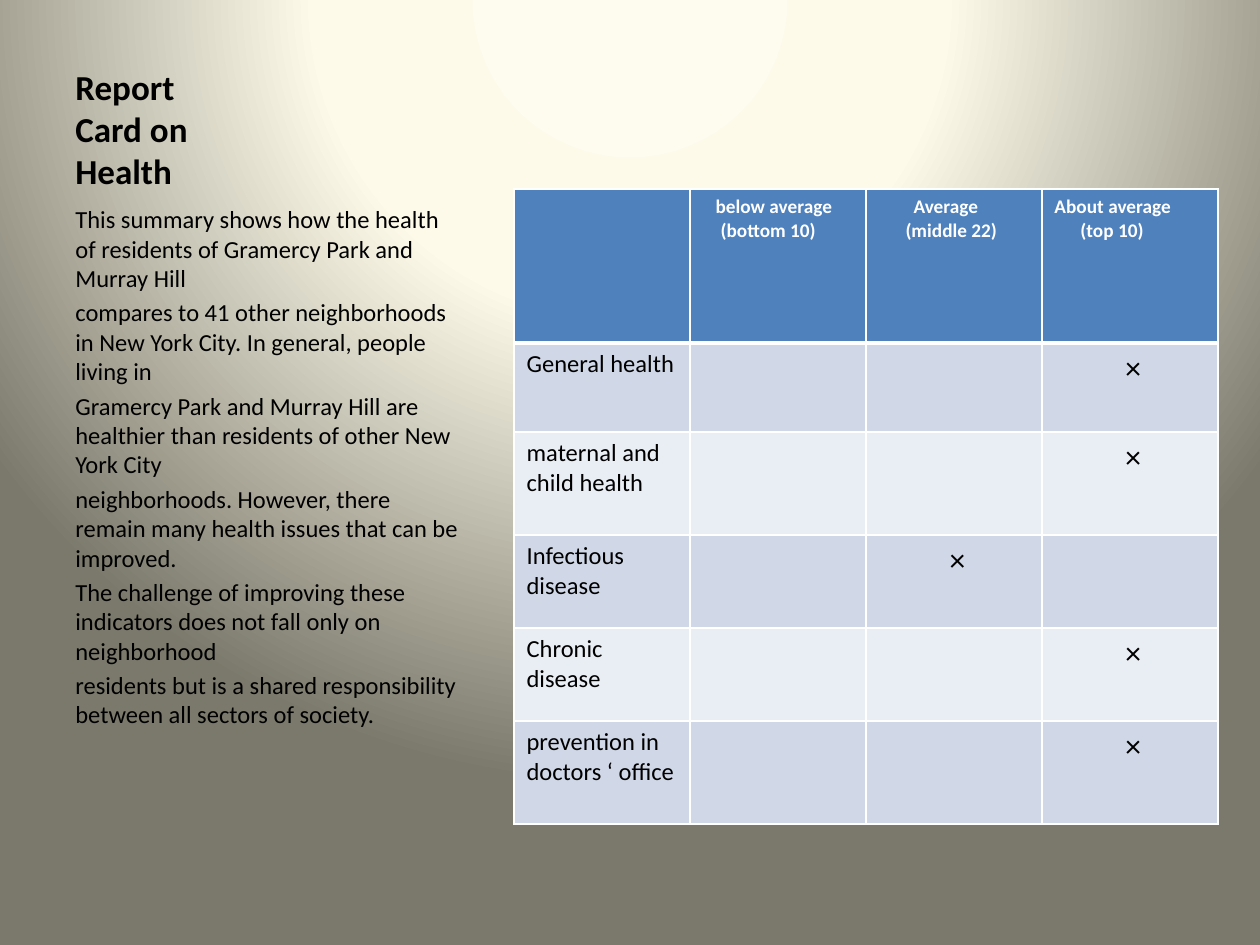
from pptx import Presentation
from pptx.dml.color import RGBColor
from pptx.enum.text import MSO_ANCHOR
from pptx.oxml import parse_xml
from pptx.oxml.ns import nsdecls, qn
from pptx.util import Emu, Pt

SCALE = 914400 / 126
COLORS = {"ink": "000000", "white": "FFFFFF", "header": "4F81BD",
          "band_dark": "D0D8E8", "band_light": "E9EDF4",
          "glow": "FEFCEE", "cream": "FDFAEA", "olive": "7B796B"}

TITLE = "Report\vCard on\vHealth"
SUMMARY = [
    "This summary shows how the health of residents of Gramercy Park and Murray Hill",
    "compares to 41 other neighborhoods in New York City. In general, people living in",
    "Gramercy Park and Murray Hill are healthier than residents of other New York City",
    "neighborhoods. However, there remain many health issues that can be improved.",
    "The challenge of improving these indicators does not fall only on neighborhood",
    "residents but is a shared responsibility between all sectors of society.",
]
# Each heading line is paired with its indent in px.
HEADINGS = [
    [("below average", 13), ("(bottom 10)", 18)],
    [("Average", 35), ("(middle 22)", 27)],
    [("About average", 0), ("(top 10)", 26)],
]
# Each topic has the column of its mark and its row height in px.
TOPICS = [
    ("General health", 3, 89),
    ("maternal and child health", 3, 103),
    ("Infectious disease", 2, 93),
    ("Chronic disease", 3, 93),
    ("prevention in doctors ‘ office", 3, 103),
]
HEADER_H = 154
MARK_INDENT = 71


def px(n):
    """Turn px into EMU."""
    return Emu(round(n * SCALE))


def write(tf, lines, size=14, color="ink", bold=False, before=0):
    """Fill a text frame with (text, indent) lines in one format."""
    tf.word_wrap = True
    for i, (text, indent) in enumerate(lines):
        p = tf.add_paragraph() if i else tf.paragraphs[0]
        if indent:
            p._p.get_or_add_pPr().set("marL", str(px(indent)))
        p.text = text
        if i and before:
            p.space_before = Pt(before)
        for r in p.runs:
            r.font.name = "Calibri"
            r.font.size = Pt(size)
            r.font.bold = bold
            r.font.color.rgb = RGBColor.from_string(COLORS[color])


def paint_background(s):
    """Give the slide a round gradient centred above its top edge."""
    s.background.fill.gradient()
    grad = s.element.find(".//" + qn("a:gradFill"))
    stops = "".join(
        f'<a:gs pos="{pos * 1000}"><a:srgbClr val="{COLORS[name]}"/></a:gs>'
        for pos, name in [(0, "glow"), (40, "cream"), (100, "olive")])
    grad.getparent().replace(grad, parse_xml(
        f'<a:gradFill {nsdecls("a")} rotWithShape="1"><a:gsLst>{stops}</a:gsLst>'
        '<a:path path="circle"><a:fillToRect l="50000" t="-80000" r="50000" '
        'b="180000"/></a:path></a:gradFill>'))


def add_summary(s, x, y, w, title_h, body_h):
    """Stack the title above the summary text."""
    tf = s.shapes.add_textbox(px(x), px(y), px(w), px(title_h)).text_frame
    tf.vertical_anchor = MSO_ANCHOR.BOTTOM
    write(tf, [(TITLE, 0)], size=20, bold=True)
    tf = s.shapes.add_textbox(px(x), px(y + title_h), px(w), px(body_h)).text_frame
    write(tf, [(text, 0) for text in SUMMARY], before=2.8)


def style_cell(cell, fill, bottom=1, top=1):
    """Give a cell white borders and a solid fill."""
    tcPr = cell._tc.get_or_add_tcPr()
    for side, width in (("L", 1), ("R", 1), ("T", top), ("B", bottom)):
        tcPr.append(parse_xml(
            f'<a:ln{side} {nsdecls("a")} w="{Pt(width)}"><a:solidFill>'
            f'<a:srgbClr val="{COLORS["white"]}"/></a:solidFill></a:ln{side}>'))
    cell.fill.solid()
    cell.fill.fore_color.rgb = RGBColor.from_string(COLORS[fill])


def add_report_card(s, x, y, w):
    """Draw the table of health ratings."""
    heights = [HEADER_H] + [h for _, _, h in TOPICS]
    cols = len(HEADINGS) + 1
    table = s.shapes.add_table(len(heights), cols, px(x), px(y),
                               px(w), px(sum(heights))).table
    for col in table.columns:
        col.width = px(w / cols)
    for row, h in zip(table.rows, heights):
        row.height = px(h)
    for c in range(cols):
        style_cell(table.cell(0, c), "header", bottom=3)
    for c, lines in enumerate(HEADINGS, 1):
        write(table.cell(0, c).text_frame, lines, size=11, color="white", bold=True)
    for i, (topic, mark, _) in enumerate(TOPICS, 1):
        for c in range(cols):
            style_cell(table.cell(i, c), "band_dark" if i % 2 else "band_light",
                       top=3 if i == 1 else 1)
        write(table.cell(i, 0).text_frame, [(topic, 0)])
        write(table.cell(i, mark).text_frame, [("×", MARK_INDENT)], size=18)


def main():
    """Build the slide and save it."""
    prs = Presentation()
    prs.slide_width, prs.slide_height = px(1260), px(945)
    s = prs.slides.add_slide(prs.slide_layouts[6])
    paint_background(s)
    add_report_card(s, 514, 189, 704)
    add_summary(s, 63, 38, 414, 160, 646)
    prs.save("out.pptx")


if __name__ == "__main__":
    main()
